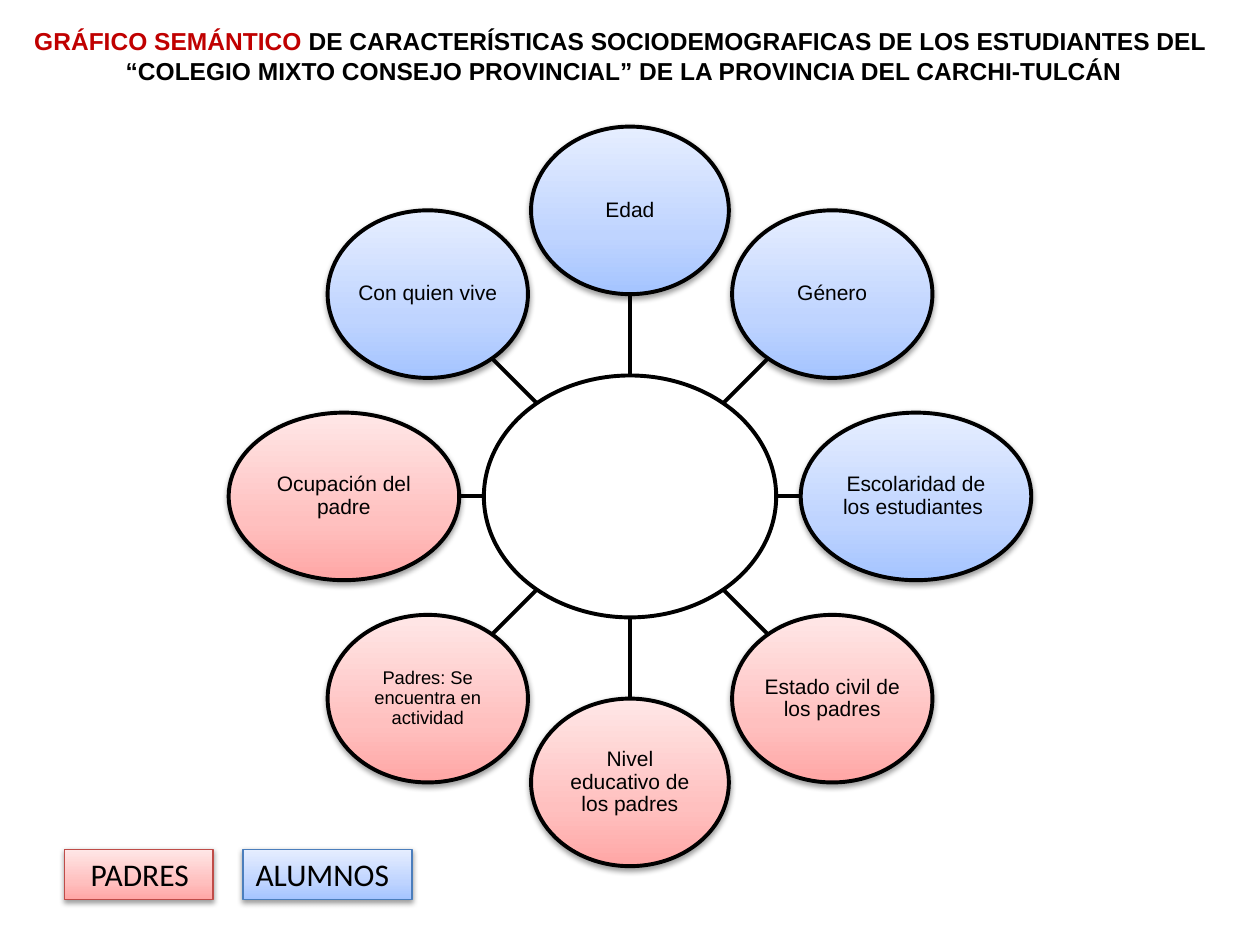
import copy
import math
from dataclasses import dataclass

import lxml.etree
import pptx
import pptx.dml.color
import pptx.enum.shapes
import pptx.enum.text
import pptx.oxml.ns
import pptx.util
from pptx.util import Inches

COLORS = {
    "black": "000000",
    "white": "FFFFFF",
    "highlight": "C00000",
    "padres": "BF4C48",
    "alumnos": "4B7EBC",
}
GRADIENTS = {
    "padres": ("FFA6A5", "FFC0BF", "FFE7E7"),
    "alumnos": ("A4C4FF", "BFD4FF", "E6EEFF"),
}
GRADIENT_POSITIONS = (0, 0.35, 1)
CENTER_X, CENTER_Y = 5, 3.94
RING_RADIUS = 2.27
HUB_WIDTH, HUB_HEIGHT = 2.32, 1.92
TRAIT_HEIGHT = 1.33


@dataclass
class Trait:
    label: str
    group: str
    width: float = 1.59
    size: float = 12


@dataclass
class LegendKey:
    label: str
    group: str
    left: float
    width: float
    inset: float


TRAITS = [
    Trait("Edad", "alumnos", 1.57),
    Trait("Género", "alumnos"),
    Trait("Escolaridad de los estudiantes ", "alumnos", 1.83),
    Trait("Estado civil de los padres", "padres"),
    Trait("Nivel educativo de los padres", "padres", 1.57),
    Trait("Padres: Se encuentra en actividad", "padres", size=10.5),
    Trait("Ocupación del padre", "padres", 1.83),
    Trait("Con quien vive", "alumnos"),
]
LEGEND = [
    LegendKey("PADRES", "padres", 0.51, 1.18, 0.21),
    LegendKey("ALUMNOS", "alumnos", 1.93, 1.34, 0.1),
]


def rgb(name: str) -> pptx.dml.color.RGBColor:
    return pptx.dml.color.RGBColor.from_string(COLORS.get(name, name))


def add_run(paragraph, text: str, size: float, font: str, color: str = "black", bold: bool = False) -> None:
    run = paragraph.add_run()
    run.text = text
    run.font.size = pptx.util.Pt(size)
    run.font.name = font
    run.font.bold = bold
    run.font.color.rgb = rgb(color)


def set_line(line, color: str, width: float) -> None:
    line.color.rgb = rgb(color)
    line.width = pptx.util.Pt(width)


def set_insets(frame, left: float, top: float, right: float, bottom: float) -> None:
    frame.margin_left, frame.margin_top = Inches(left), Inches(top)
    frame.margin_right, frame.margin_bottom = Inches(right), Inches(bottom)


def add_box(shapes, preset, left: float, top: float, width: float, height: float):
    box = shapes.add_shape(preset, Inches(left), Inches(top), Inches(width), Inches(height))
    box.shadow.inherit = False
    return box


def style_group(box, group: str) -> None:
    box.fill.gradient()
    box.fill.gradient_angle = 90
    properties = box._element.spPr
    stops = properties.find(".//" + pptx.oxml.ns.qn("a:gsLst"))
    stops.insert(1, copy.deepcopy(stops[0]))
    for stop, color, position in zip(box.fill.gradient_stops, GRADIENTS[group], GRADIENT_POSITIONS):
        stop.color.rgb = rgb(color)
        stop.position = position
    effects = properties.find(pptx.oxml.ns.qn("a:effectLst"))
    shadow = lxml.etree.SubElement(
        effects, pptx.oxml.ns.qn("a:outerShdw"),
        blurRad="40000", dist="20000", dir="5400000", rotWithShape="0",
    )
    tone = lxml.etree.SubElement(shadow, pptx.oxml.ns.qn("a:srgbClr"), val=COLORS["black"])
    lxml.etree.SubElement(tone, pptx.oxml.ns.qn("a:alpha"), val="38000")


def ellipse_reach(width: float, height: float, angle: float) -> float:
    return 1 / math.hypot(2 * math.cos(angle) / width, 2 * math.sin(angle) / height)


def ring_point(radius: float, angle: float) -> tuple[float, float]:
    return CENTER_X + radius * math.cos(angle), CENTER_Y + radius * math.sin(angle)


def add_spoke(shapes, trait: Trait, angle: float) -> None:
    start = ring_point(ellipse_reach(HUB_WIDTH, HUB_HEIGHT, angle), angle)
    end = ring_point(RING_RADIUS - ellipse_reach(trait.width, TRAIT_HEIGHT, angle), angle)
    spoke = shapes.add_connector(
        pptx.enum.shapes.MSO_CONNECTOR.STRAIGHT, *(Inches(value) for value in start + end)
    )
    set_line(spoke.line, "black", 2.25)
    lxml.etree.SubElement(spoke._element.spPr, pptx.oxml.ns.qn("a:effectLst"))


def add_trait(shapes, trait: Trait, angle: float) -> None:
    x, y = ring_point(RING_RADIUS, angle)
    bubble = add_box(
        shapes, pptx.enum.shapes.MSO_SHAPE.OVAL,
        x - trait.width / 2, y - TRAIT_HEIGHT / 2, trait.width, TRAIT_HEIGHT,
    )
    set_line(bubble.line, "black", 2.25)
    style_group(bubble, trait.group)
    frame = bubble.text_frame
    set_insets(frame, 0.01, 0.01, 0.01, 0.01)
    frame.vertical_anchor = pptx.enum.text.MSO_ANCHOR.MIDDLE
    paragraph = frame.paragraphs[0]
    paragraph.alignment = pptx.enum.text.PP_ALIGN.CENTER
    paragraph.line_spacing = 0.9
    add_run(paragraph, trait.label, trait.size, "Arial")


def add_legend_key(shapes, key: LegendKey) -> None:
    swatch = add_box(shapes, pptx.enum.shapes.MSO_SHAPE.RECTANGLE, key.left, 6.74, key.width, 0.4)
    set_line(swatch.line, key.group, 0.75)
    style_group(swatch, key.group)
    frame = swatch.text_frame
    set_insets(frame, key.inset, 0.05, 0.1, 0.05)
    frame.vertical_anchor = pptx.enum.text.MSO_ANCHOR.TOP
    paragraph = frame.paragraphs[0]
    paragraph.alignment = pptx.enum.text.PP_ALIGN.LEFT
    add_run(paragraph, key.label, 18, "Calibri")


def add_heading(title) -> None:
    title.left, title.top = Inches(0.12), Inches(0.16)
    title.width, title.height = Inches(9.61), Inches(0.82)
    frame = title.text_frame
    frame.word_wrap = True
    frame.auto_size = pptx.enum.text.MSO_AUTO_SIZE.NONE
    frame.vertical_anchor = pptx.enum.text.MSO_ANCHOR.TOP
    set_insets(frame, 0.1, 0.05, 0.1, 0)
    subject, school = frame.paragraphs[0], frame.add_paragraph()
    for paragraph in (subject, school):
        paragraph.alignment = pptx.enum.text.PP_ALIGN.CENTER
    add_run(subject, "GRÁFICO SEMÁNTICO ", 14, "Arial", "highlight", True)
    add_run(subject, "DE CARACTERÍSTICAS SOCIODEMOGRAFICAS DE LOS ESTUDIANTES DEL", 14, "Arial", bold=True)
    add_run(school, " “COLEGIO MIXTO CONSEJO PROVINCIAL” DE LA PROVINCIA DEL CARCHI-TULCÁN", 14, "Arial", bold=True)


def main() -> None:
    deck = pptx.Presentation()
    deck.slide_width, deck.slide_height = Inches(10), Inches(7.5)
    slide = deck.slides.add_slide(deck.slide_layouts[5])
    add_heading(slide.shapes.title)
    hub = add_box(
        slide.shapes, pptx.enum.shapes.MSO_SHAPE.OVAL,
        CENTER_X - HUB_WIDTH / 2, CENTER_Y - HUB_HEIGHT / 2, HUB_WIDTH, HUB_HEIGHT,
    )
    hub.fill.solid()
    hub.fill.fore_color.rgb = rgb("white")
    set_line(hub.line, "black", 2.25)
    for position, trait in enumerate(TRAITS):
        angle = math.tau * position / len(TRAITS) - math.pi / 2
        add_spoke(slide.shapes, trait, angle)
        add_trait(slide.shapes, trait, angle)
    for key in LEGEND:
        add_legend_key(slide.shapes, key)
    deck.save("out.pptx")


if __name__ == "__main__":
    main()
